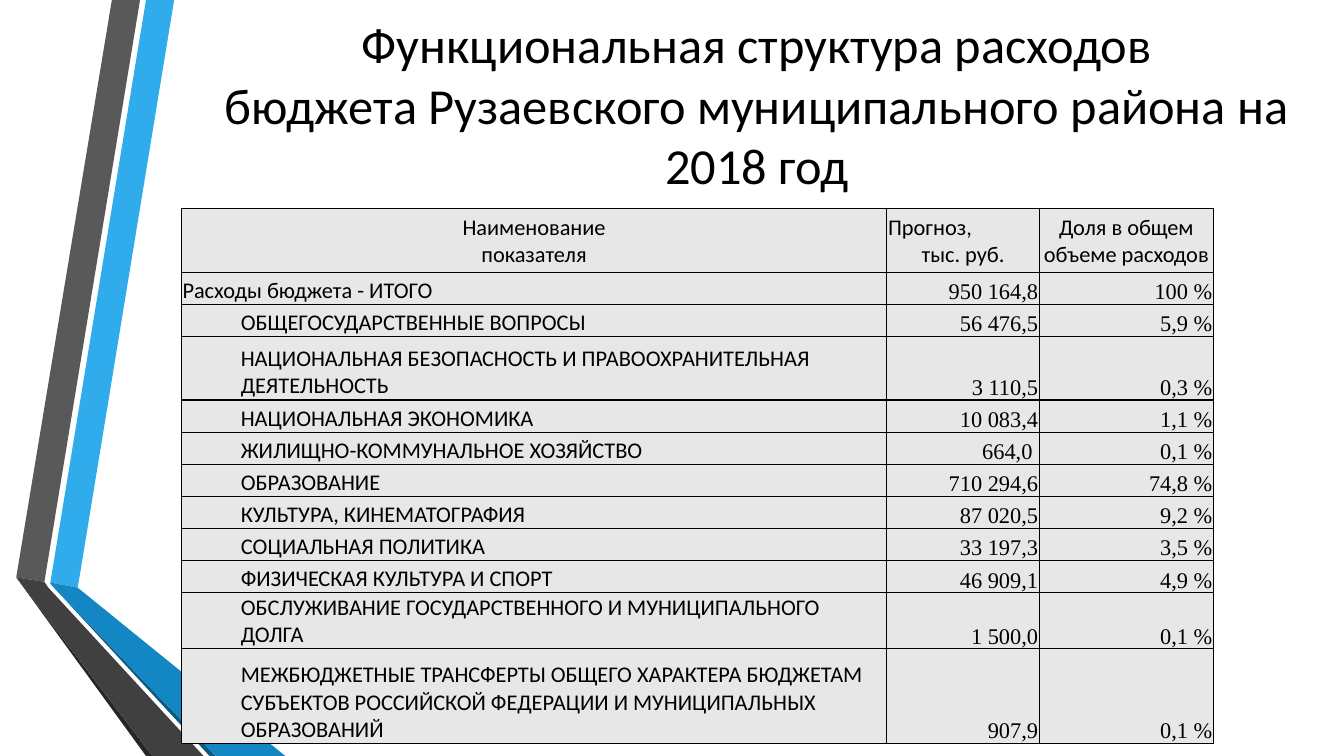
from dataclasses import dataclass

from lxml import etree
from pptx import Presentation
from pptx.dml.color import RGBColor
from pptx.enum.text import MSO_ANCHOR, MSO_AUTO_SIZE, PP_ALIGN
from pptx.oxml.ns import qn
from pptx.util import Cm, Pt

LEFT, CENTER, RIGHT = PP_ALIGN.LEFT, PP_ALIGN.CENTER, PP_ALIGN.RIGHT
MIDDLE, BOTTOM = MSO_ANCHOR.MIDDLE, MSO_ANCHOR.BOTTOM
NO_AUTOFIT = MSO_AUTO_SIZE.NONE


@dataclass(frozen=True)
class Theme:
    text: str = "000000"
    border: str = "000000"
    cell: str = "E7E7E7"
    blue_light: str = "30ACEC"
    blue: str = "1287C3"
    blue_dark: str = "0C5A82"
    grey_light: str = "595959"
    grey: str = "404040"
    grey_dark: str = "262626"
    font: str = "Calibri"
    number_font: str = "Times New Roman"
    title_size: int = 36
    table_size: int = 16
    border_width: int = 1


@dataclass(frozen=True)
class Ribbon:
    color: str
    points: tuple[tuple[float, float], ...]


@dataclass(frozen=True)
class Expense:
    name: str
    amount: str
    share: str
    height: float = 0.81
    nested: bool = True


THEME = Theme()
SLIDE_H = 19.05
HEADER_H = 1.6
COLUMN_WIDTHS = (17.78, 3.84, 4.39)
INSET = 0.03
NESTED_INSET = 0.23
NESTED_INDENT = 1.27

RIBBONS = (
    Ribbon(THEME.blue_light, ((1.27, 14.68), (1.96, 14.81), (4.39, 0), (3.68, 0))),
    Ribbon(THEME.grey_light, ((3.53, 0), (2.82, 0), (0.41, 14.55), (1.12, 14.66))),
    Ribbon(THEME.grey_dark, ((0.41, 14.55), (3.68, SLIDE_H), (3.84, SLIDE_H))),
    Ribbon(THEME.blue_dark, ((1.27, 14.71), (5.28, SLIDE_H), (5.44, SLIDE_H))),
    Ribbon(THEME.blue, ((1.27, 14.68), (1.27, 14.71), (5.44, SLIDE_H),
                        (7.19, SLIDE_H), (1.96, 14.81))),
    Ribbon(THEME.grey, ((5.13, SLIDE_H), (1.22, 14.81), (1.12, 14.66),
                        (0.41, 14.55), (3.84, SLIDE_H))),
)

TITLE = ("Функциональная структура расходов\v"
         "бюджета Рузаевского муниципального района на 2018 год")

HEADERS = (
    (("Наименование", CENTER), ("показателя", CENTER)),
    (("Прогноз,", LEFT), ("тыс. руб.", CENTER)),
    (("Доля в общем объеме расходов", CENTER),),
)

EXPENSES = (
    Expense("Расходы бюджета - ИТОГО", "950 164,8", "100 %", nested=False),
    Expense("ОБЩЕГОСУДАРСТВЕННЫЕ ВОПРОСЫ", "56 476,5", "5,9 %"),
    Expense("НАЦИОНАЛЬНАЯ БЕЗОПАСНОСТЬ И ПРАВООХРАНИТЕЛЬНАЯ ДЕЯТЕЛЬНОСТЬ",
            "3 110,5", "0,3 %", 1.6),
    Expense("НАЦИОНАЛЬНАЯ ЭКОНОМИКА", "10 083,4", "1,1 %"),
    Expense("ЖИЛИЩНО-КОММУНАЛЬНОЕ ХОЗЯЙСТВО", "664,0 ", "0,1 %"),
    Expense("ОБРАЗОВАНИЕ", "710 294,6", "74,8 %"),
    Expense("КУЛЬТУРА, КИНЕМАТОГРАФИЯ", "87 020,5", "9,2 %"),
    Expense("СОЦИАЛЬНАЯ ПОЛИТИКА", "33 197,3", "3,5 %"),
    Expense("ФИЗИЧЕСКАЯ КУЛЬТУРА И СПОРТ", "46 909,1", "4,9 %"),
    Expense("ОБСЛУЖИВАНИЕ ГОСУДАРСТВЕННОГО И МУНИЦИПАЛЬНОГО ДОЛГА",
            "1 500,0", "0,1 %", 0.94),
    Expense("МЕЖБЮДЖЕТНЫЕ ТРАНСФЕРТЫ ОБЩЕГО ХАРАКТЕРА БЮДЖЕТАМ СУБЪЕКТОВ "
            "РОССИЙСКОЙ ФЕДЕРАЦИИ И МУНИЦИПАЛЬНЫХ ОБРАЗОВАНИЙ",
            "907,9", "0,1 %", 2.39),
)


def set_font(p, size: int, name: str) -> None:
    p.font.size = Pt(size)
    p.font.name = name
    p.font.color.rgb = RGBColor.from_string(THEME.text)


def draw_ribbon(s, ribbon: Ribbon) -> None:
    start, *rest = [(Cm(x), Cm(y)) for x, y in ribbon.points]
    builder = s.shapes.build_freeform(*start)
    builder.add_line_segments(rest, close=True)
    sp = builder.convert_to_shape()
    sp.shadow.inherit = False
    sp.fill.solid()
    sp.fill.fore_color.rgb = RGBColor.from_string(ribbon.color)
    sp.line.fill.background()


def draw_title(s) -> None:
    sp = s.shapes.title
    sp.left, sp.top, sp.width, sp.height = Cm(4.57), Cm(0.43), Cm(29.01), Cm(4.39)
    tf = sp.text_frame
    tf.word_wrap = True
    tf.auto_size = NO_AUTOFIT
    tf.vertical_anchor = MIDDLE
    p = tf.paragraphs[0]
    p.text = TITLE
    p.alignment = CENTER
    set_font(p, THEME.title_size, THEME.font)


def add_borders(cell) -> None:
    tc_pr = cell._tc.get_or_add_tcPr()
    for side in ("a:lnL", "a:lnR", "a:lnT", "a:lnB"):
        ln = etree.SubElement(tc_pr, qn(side), w=str(Pt(THEME.border_width)))
        fill = etree.SubElement(ln, qn("a:solidFill"))
        etree.SubElement(fill, qn("a:srgbClr"), val=THEME.border)


def fill_cell(cell, lines: tuple[tuple[str, PP_ALIGN], ...], anchor: MSO_ANCHOR,
              font: str = THEME.font, nested: bool = False) -> None:
    """Write one paragraph per (text, alignment) pair and style the cell."""
    add_borders(cell)
    cell.fill.solid()
    cell.fill.fore_color.rgb = RGBColor.from_string(THEME.cell)
    cell.vertical_anchor = anchor
    cell.margin_left = Cm(NESTED_INSET if nested else INSET)
    cell.margin_right = cell.margin_top = Cm(INSET)
    cell.margin_bottom = 0
    tf = cell.text_frame
    for i, (text, align) in enumerate(lines):
        p = tf.add_paragraph() if i else tf.paragraphs[0]
        p.text = text
        p.alignment = align
        set_font(p, THEME.table_size, font)
        if nested:
            p.level = 1
            p._p.get_or_add_pPr().set("marL", str(Cm(NESTED_INDENT)))


def draw_table(s) -> None:
    heights = [HEADER_H, *(e.height for e in EXPENSES)]
    table = s.shapes.add_table(
        len(heights), len(COLUMN_WIDTHS), Cm(4.57), Cm(5.26),
        Cm(sum(COLUMN_WIDTHS)), Cm(sum(heights))).table
    table.first_row = table.horz_banding = False
    for column, width in zip(table.columns, COLUMN_WIDTHS):
        column.width = Cm(width)
    for row, height in zip(table.rows, heights):
        row.height = Cm(height)
    for col, lines in enumerate(HEADERS):
        fill_cell(table.cell(0, col), lines, MIDDLE)
    for row, e in enumerate(EXPENSES, 1):
        fill_cell(table.cell(row, 0), ((e.name, LEFT),), BOTTOM, nested=e.nested)
        for col, value in enumerate((e.amount, e.share), 1):
            fill_cell(table.cell(row, col), ((value, RIGHT),), BOTTOM,
                      THEME.number_font)


def main() -> None:
    prs = Presentation()
    prs.slide_width, prs.slide_height = Cm(33.87), Cm(SLIDE_H)
    s = prs.slides.add_slide(prs.slide_layouts[5])
    for ribbon in RIBBONS:
        draw_ribbon(s, ribbon)
    draw_title(s)
    draw_table(s)
    prs.save("out.pptx")


if __name__ == "__main__":
    main()
